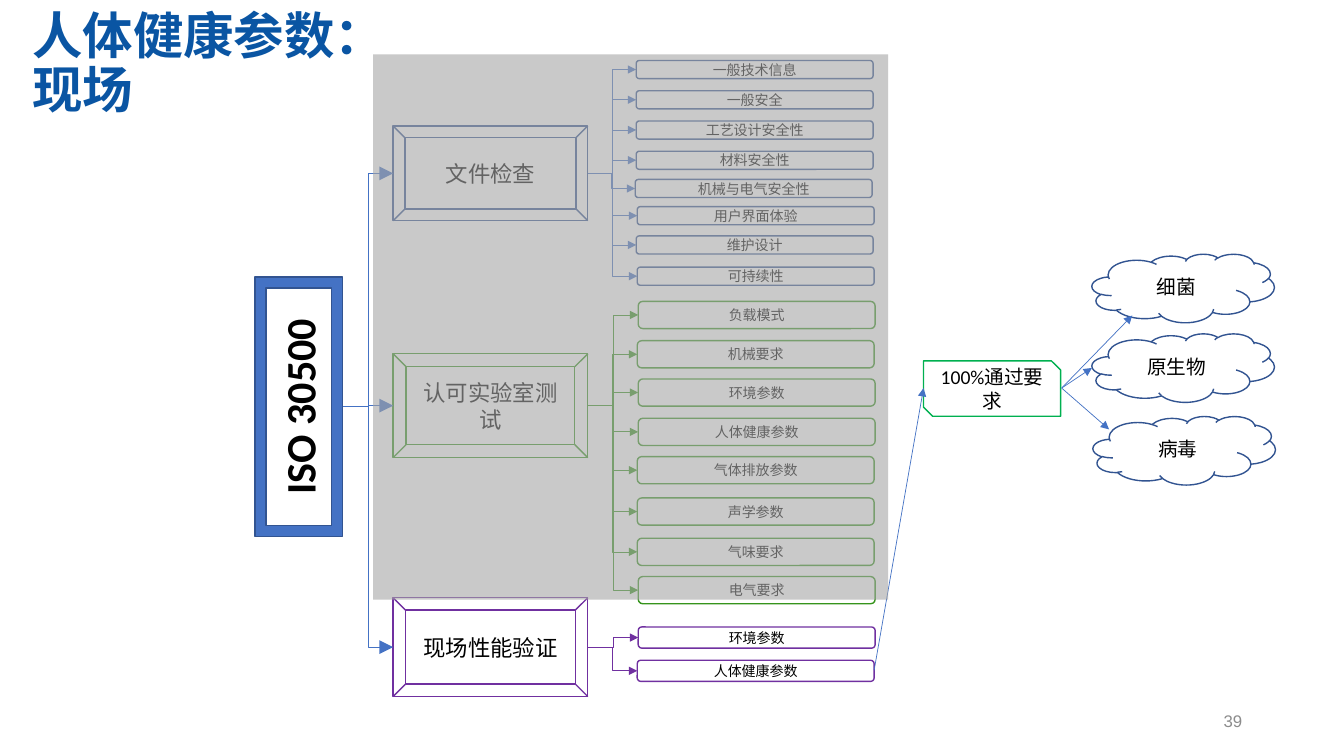
from lxml.etree import SubElement
from pptx import Presentation
from pptx.dml.color import RGBColor
from pptx.enum.shapes import MSO_CONNECTOR, MSO_SHAPE
from pptx.enum.text import MSO_ANCHOR, PP_ALIGN
from pptx.oxml.ns import qn
from pptx.util import Inches, Pt

TITLE_BLUE = RGBColor(0x0A, 0x55, 0xA3)
BLUE = RGBColor(0x44, 0x72, 0xC4)
NAVY = RGBColor(0x32, 0x54, 0x91)
GREEN = RGBColor(0x36, 0x94, 0x1C)
BRIGHT_GREEN = RGBColor(0x00, 0xB0, 0x50)
PURPLE = RGBColor(0x70, 0x30, 0xA0)
BLACK = RGBColor(0, 0, 0)
GRAY = RGBColor(0xA5, 0xA5, 0xA5)
PAGE_GRAY = RGBColor(0x8C, 0x8C, 0x8C)

deck = Presentation()
deck.slide_width, deck.slide_height = Inches(13.33), Inches(7.5)
page = deck.slides.add_slide(deck.slide_layouts[6])


def add_node(kind, left, top, width, height, color, text, size):
    """Add an outlined shape with centred black text."""
    node = page.shapes.add_shape(kind, Inches(left), Inches(top), Inches(width), Inches(height))
    node.shadow.inherit = False
    node.fill.background()
    node.line.color.rgb = color
    node.line.width = Pt(1)
    node.text_frame.word_wrap = True
    node.text_frame.vertical_anchor = MSO_ANCHOR.MIDDLE
    para = node.text_frame.paragraphs[0]
    para.alignment = PP_ALIGN.CENTER
    span = para.add_run()
    span.text = text
    span.font.name, span.font.size = "Calibri", Pt(size)
    span.font.color.rgb = BLACK
    return node


def add_arrow(kind, start, end, color, head="med"):
    """Add a thin connector that ends in a triangle."""
    arrow = page.shapes.add_connector(kind, *[Inches(value) for value in (*start, *end)])
    arrow.line.color.rgb = color
    arrow.line.width = Pt(0.5)
    SubElement(arrow.line._get_or_add_ln(), qn("a:tailEnd"), type="triangle", w=head, len=head)
    SubElement(arrow.element.spPr, qn("a:effectLst"))


# Title
box = page.shapes.add_textbox(Inches(0.32), Inches(0.15), Inches(12.24), Inches(0.99))
frame = box.text_frame
frame.word_wrap = True
frame.vertical_anchor = MSO_ANCHOR.MIDDLE
frame.margin_left = frame.margin_right = frame.margin_top = frame.margin_bottom = 0
para = frame.paragraphs[0]
para.line_spacing = 0.9
for index, text in enumerate(["人体健康参数：", "现场"]):
    if index:
        para.add_line_break()
    span = para.add_run()
    span.text = text
    span.font.name, span.font.size, span.font.bold = "Arial", Pt(36), True
    span.font.color.rgb = TITLE_BLUE

# Root of the tree
root = add_node(MSO_SHAPE.FRAME, 2.53, 2.75, 0.87, 2.57, NAVY, "ISO 30500", 30)
root.fill.solid()
root.fill.fore_color.rgb = BLUE
root.text_frame.paragraphs[0].runs[0].font.bold = True
root.element.txBody.bodyPr.set("vert", "vert270")

# Branches: name, top, height, outline, arrow colour, leaf height, leaves (left, top, text)
branches = [
    ("文件检查", 1.25, 0.94, NAVY, BLUE, 0.18, [
        (6.31, 0.6, "一般技术信息"), (6.31, 0.9, "一般安全"),
        (6.31, 1.2, "工艺设计安全性"), (6.31, 1.5, "材料安全性"),
        (6.3, 1.78, "机械与电气安全性"), (6.32, 2.05, "用户界面体验"),
        (6.31, 2.34, "维护设计"), (6.32, 2.65, "可持续性")]),
    ("认可实验室测试", 3.51, 1.03, GREEN, GREEN, 0.27, [
        (6.33, 2.99, "负载模式"), (6.32, 3.38, "机械要求"),
        (6.33, 3.76, "环境参数"), (6.33, 4.15, "人体健康参数"),
        (6.32, 4.53, "气体排放参数"), (6.32, 4.94, "声学参数"),
        (6.32, 5.34, "气味要求"), (6.33, 5.72, "电气要求")]),
    ("现场性能验证", 5.93, 0.98, PURPLE, PURPLE, 0.21, [
        (6.33, 6.22, "环境参数"), (6.32, 6.55, "人体健康参数")]),
]
for name, top, height, outline, arrow_color, leaf_height, leaves in branches:
    middle = top + height / 2
    add_node(MSO_SHAPE.BEVEL, 3.9, top, 1.93, height, outline, name, 16)
    add_arrow(MSO_CONNECTOR.ELBOW, (3.4, 4.03), (3.9, middle), BLUE, "lg")
    for left, leaf_top, text in leaves:
        add_arrow(MSO_CONNECTOR.ELBOW, (5.83, middle), (left, leaf_top + leaf_height / 2), arrow_color)
        add_node(MSO_SHAPE.ROUNDED_RECTANGLE, left, leaf_top, 2.35, leaf_height, outline, text, 10)

# Pass requirement and the organisms it covers
add_node(MSO_SHAPE.SNIP_2_DIAG_RECTANGLE, 9.16, 3.58, 1.36, 0.55, BRIGHT_GREEN, "100%通过要求", 14)
add_arrow(MSO_CONNECTOR.STRAIGHT, (8.67, 6.65), (9.16, 3.85), BLUE)
for left, top, text, target in [
    (10.83, 2.52, "细菌", (11.23, 3.13)),
    (10.83, 3.31, "原生物", (10.83, 3.65)),
    (10.84, 4.13, "病毒", (11, 4.26)),
]:
    add_node(MSO_SHAPE.CLOUD, left, top, 1.81, 0.68, NAVY, text, 14)
    add_arrow(MSO_CONNECTOR.STRAIGHT, (10.53, 3.85), target, BLUE)

# Page number
box = page.shapes.add_textbox(Inches(9.42), Inches(6.95), Inches(3), Inches(0.4))
box.text_frame.word_wrap = True
box.text_frame.vertical_anchor = MSO_ANCHOR.MIDDLE
para = box.text_frame.paragraphs[0]
para.alignment = PP_ALIGN.RIGHT
span = para.add_run()
span.text = "39"
span.font.name, span.font.size = "Arial", Pt(12)
span.font.color.rgb = PAGE_GRAY

# Translucent veil over the first two branches
veil = page.shapes.add_shape(MSO_SHAPE.RECTANGLE, Inches(3.7), Inches(0.54), Inches(5.11), Inches(5.41))
veil.shadow.inherit = False
veil.line.fill.background()
veil.fill.solid()
veil.fill.fore_color.rgb = GRAY
color = veil.element.spPr.find(qn("a:solidFill")).find(qn("a:srgbClr"))
SubElement(color, qn("a:alpha"), val="60000")

deck.save("out.pptx")
